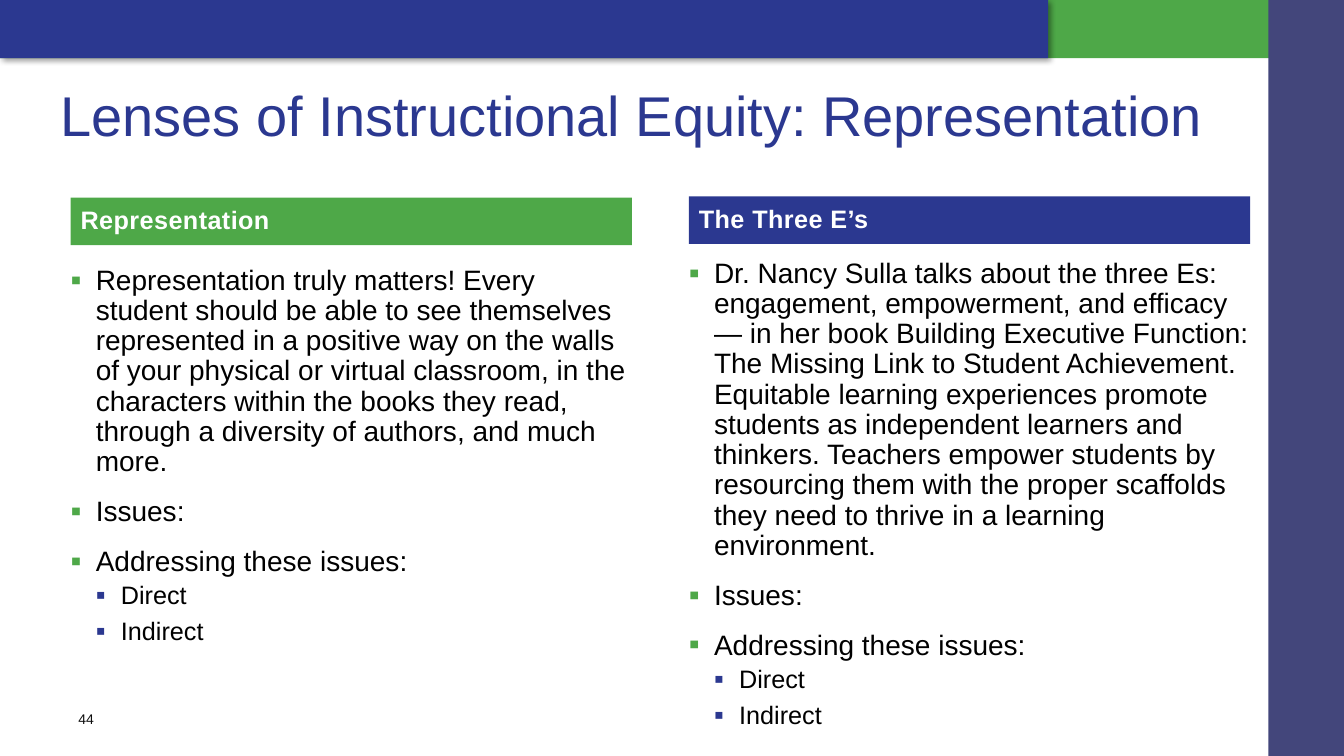
from lxml.etree import SubElement
from pptx import Presentation
from pptx.dml.color import RGBColor
from pptx.enum.shapes import MSO_SHAPE
from pptx.enum.text import MSO_ANCHOR, MSO_AUTO_SIZE, PP_ALIGN
from pptx.oxml.ns import qn
from pptx.util import Pt

BLUE = RGBColor(0x2B, 0x38, 0x90)
GREEN = RGBColor(0x4E, 0xA8, 0x48)
SLATE = RGBColor(0x43, 0x46, 0x7B)
WHITE = RGBColor(0xFF, 0xFF, 0xFF)
BLACK = RGBColor(0, 0, 0)
DARK = RGBColor(0x0D, 0x0D, 0x0D)

COLUMN_WIDTH = 401
HEADER_HEIGHT = 34
LEVELS = [
    dict(size=20, before=12, after=2, bullet=GREEN),
    dict(size=18, before=2, after=4, bullet=BLUE),
]
SHARED_POINTS = [
    ("Issues:", 0),
    ("Addressing these issues:", 0),
    ("Direct", 1),
    ("Indirect", 1),
]
REPRESENTATION = (
    "Representation truly matters! Every student should be able to see themselves "
    "represented in a positive way on the walls of your physical or virtual classroom, "
    "in the characters within the books they read, through a diversity of authors, "
    "and much more."
)
THREE_ES = (
    "Dr. Nancy Sulla talks about the three Es: engagement, empowerment, and efficacy "
    "— in her book Building Executive Function: The Missing Link to Student Achievement. "
    "Equitable learning experiences promote students as independent learners and thinkers. "
    "Teachers empower students by resourcing them with the proper scaffolds they need "
    "to thrive in a learning environment."
)


def add_bar(s, left, width, height, color):
    bar = s.shapes.add_shape(MSO_SHAPE.RECTANGLE, Pt(left), 0, Pt(width), Pt(height))
    bar.shadow.inherit = False
    bar.fill.solid()
    bar.fill.fore_color.rgb = color
    bar.line.fill.background()
    return bar


def add_shadow(shape):
    effects = shape._element.spPr.find(qn("a:effectLst"))
    shadow = SubElement(effects, qn("a:outerShdw"), blurRad=str(Pt(4)),
                        dist=str(Pt(2)), dir="2700000", algn="tl", rotWithShape="0")
    color = SubElement(shadow, qn("a:srgbClr"), val="000000")
    SubElement(color, qn("a:alpha"), val="40000")


def place(sp, left, top, width, height, insets=(0, 0, 0, 0), anchor=MSO_ANCHOR.MIDDLE):
    """Position a text shape and prepare its frame; insets run left, top, right, bottom."""
    sp.left, sp.top, sp.width, sp.height = Pt(left), Pt(top), Pt(width), Pt(height)
    tf = sp.text_frame
    tf.word_wrap = True
    tf.auto_size = MSO_AUTO_SIZE.NONE
    tf.vertical_anchor = anchor
    tf.margin_left, tf.margin_top, tf.margin_right, tf.margin_bottom = map(Pt, insets)
    return tf


def add_bullet(p, level, color):
    pPr = p._p.get_or_add_pPr()
    pPr.set("marL", str(Pt(18 * (level + 1))))
    pPr.set("indent", str(-Pt(18)))
    SubElement(SubElement(pPr, qn("a:buClr")), qn("a:srgbClr"), val=str(color))
    SubElement(pPr, qn("a:buSzPct"), val="110000")
    SubElement(pPr, qn("a:buFont"), typeface="Arial")
    SubElement(pPr, qn("a:buChar"), char="▪")


def write(p, text, size, color, bold=False, align=PP_ALIGN.LEFT, level=0,
          bullet=None, before=0, after=0, spacing=1.0, tracking=0):
    p.level = level
    if bullet is not None:
        add_bullet(p, level, bullet)
    p.alignment = align
    p.line_spacing = spacing
    p.space_before, p.space_after = Pt(before), Pt(after)
    r = p.add_run()
    r.text = text
    r.font.name = "Arial"
    r.font.size = Pt(size)
    r.font.bold = bold
    r.font.color.rgb = color
    if tracking:
        r._r.get_or_add_rPr().set("spc", str(round(tracking * 100)))


def fill_header(sp, text, left, top, color):
    tf = place(sp, left, top, COLUMN_WIDTH, HEADER_HEIGHT, insets=(7.2,) * 4)
    sp.fill.solid()
    sp.fill.fore_color.rgb = color
    write(tf.paragraphs[0], text, 18, WHITE, bold=True, spacing=0.9, tracking=0.3)


def fill_list(sp, points, left, top, height):
    tf = place(sp, left, top, COLUMN_WIDTH, height, anchor=MSO_ANCHOR.TOP)
    for i, (text, level) in enumerate(points):
        p = tf.add_paragraph() if i else tf.paragraphs[0]
        style = dict(LEVELS[level])
        if i == 0:
            style["before"] = 0
        write(p, text, color=BLACK, level=level, spacing=0.9, **style)


def main():
    prs = Presentation()
    prs.slide_width, prs.slide_height = Pt(960), Pt(540)
    s = prs.slides.add_slide(prs.slide_layouts.get_by_name("Comparison"))

    add_bar(s, 0, 960, 41.6, GREEN)
    add_shadow(add_bar(s, 0, 748.8, 41.6, BLUE))

    title = place(s.shapes.title, 0, 41.6, 960, 72, insets=(43.2, 7.2, 0, 0))
    write(title.paragraphs[0], "Lenses of Instructional Equity: Representation", 40, BLUE)

    left_header, left_list, right_header, right_list = list(s.placeholders)[1:5]
    fill_header(left_header, "Representation", 50.4, 141.2, GREEN)
    fill_list(left_list, [(REPRESENTATION, 0)] + SHARED_POINTS, 50.4, 190, 296)
    fill_header(right_header, "The Three E’s", 492, 140.2, BLUE)
    fill_list(right_list, [(THREE_ES, 0)] + SHARED_POINTS, 492, 185, 343)

    number = place(s.shapes.add_textbox(0, 0, 0, 0), 49.5, 499, 24, 29,
                   insets=(0, 3.6, 0, 3.6))
    write(number.paragraphs[0], "44", 10, DARK, align=PP_ALIGN.CENTER)

    add_bar(s, 906, 54, 540, SLATE)
    prs.save("out.pptx")


if __name__ == "__main__":
    main()
